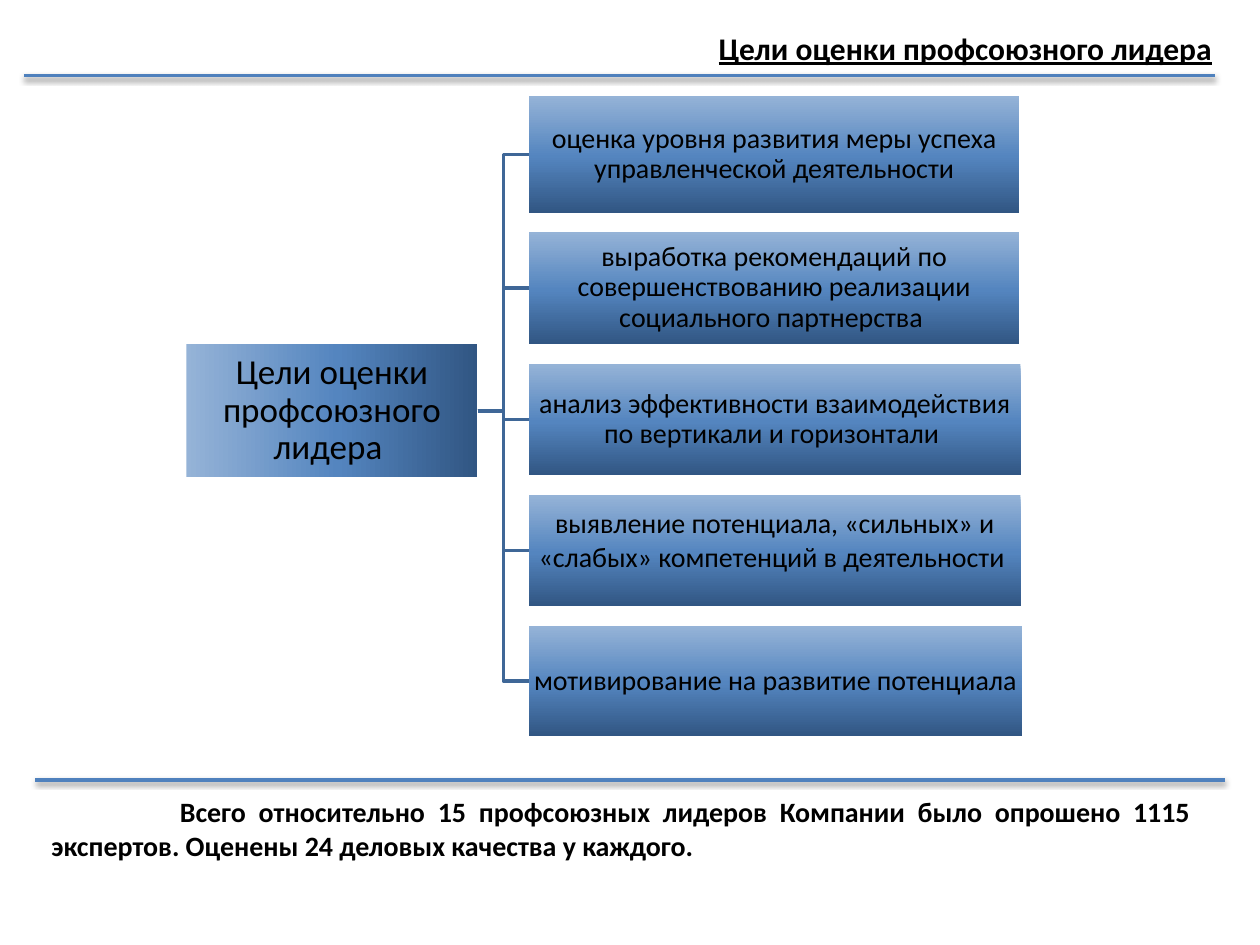
from copy import deepcopy
from dataclasses import dataclass

from lxml import etree
from pptx import Presentation
from pptx.dml.color import RGBColor
from pptx.enum import shapes as kinds, text as modes
from pptx.oxml import ns
from pptx.slide import Slide
from pptx.util import Inches, Pt

BLACK = RGBColor(0x00, 0x00, 0x00)
RULE = RGBColor(0x4F, 0x81, 0xBD)
LINK = RGBColor(0x3F, 0x67, 0x97)
SHADES = (
    (0, RGBColor(0x95, 0xB3, 0xD7)),
    (0.52, RGBColor(0x54, 0x85, 0xBF)),
    (1, RGBColor(0x31, 0x56, 0x83)),
)
ALIGN = modes.PP_ALIGN
ANCHOR = modes.MSO_ANCHOR
GOALS = (
    ("оценка уровня развития меры успеха управленческой деятельности",
     0.76, 3.89, 0.93, {}, {}),
    ("выработка рекомендаций по совершенствованию реализации социального партнерства ",
     1.84, 3.89, 0.89, {}, {}),
    ("анализ эффективности взаимодействия по вертикали и горизонтали ",
     2.89, 3.9, 0.88, {}, {}),
    ("выявление потенциала, «сильных» и «слабых» компетенций в деятельности ",
     3.93, 3.9, 0.88, {"line_spacing": 1.0}, {"margin_bottom": Inches(0.19)}),
    ("мотивирование на развитие потенциала",
     4.97, 3.91, 0.87, {}, {}),
)


def apply(item, values):
    for key, value in values.items():
        setattr(item, key, value)


@dataclass
class Board:
    slide: Slide
    face: str = "Calibri"

    def label(self, shape, words, font, para, frame):
        area = shape.text_frame
        area.text = words
        apply(area, {"word_wrap": True, **frame})
        line = area.paragraphs[0]
        apply(line, para)
        style = line.runs[0].font
        apply(style, {"name": self.face, **font})
        style.color.rgb = BLACK

    def title(self, words, box):
        shape = self.slide.shapes.title
        apply(shape, dict(zip(("left", "top", "width", "height"), map(Inches, box))))
        self.label(shape, words, {"size": Pt(18), "bold": True, "underline": True},
                   {"alignment": ALIGN.RIGHT}, {"vertical_anchor": ANCHOR.TOP})

    def note(self, words, box, indent):
        shape = self.slide.shapes.add_textbox(*map(Inches, box))
        self.label(shape, words, {"size": Pt(16), "bold": True},
                   {"alignment": ALIGN.JUSTIFY}, {})
        props = shape.text_frame.paragraphs[0]._p.get_or_add_pPr()
        props.set("indent", str(Inches(indent)))

    def rule(self, left, right, y):
        line = self.slide.shapes.add_connector(
            kinds.MSO_CONNECTOR.STRAIGHT, *map(Inches, (left, y, right, y)))
        line.line.color.rgb = RULE
        line.line.width = Pt(2)
        effects = etree.SubElement(line._element.spPr, ns.qn("a:effectLst"))
        shadow = etree.SubElement(
            effects, ns.qn("a:outerShdw"), blurRad="40000", dist="20000",
            dir="5400000", rotWithShape="0")
        tint = etree.SubElement(shadow, ns.qn("a:srgbClr"), val="000000")
        etree.SubElement(tint, ns.qn("a:alpha"), val="38000")

    def link(self, start, end):
        (left, top), (right, low) = start, end
        bend = (left + right) / 2
        outline = self.slide.shapes.build_freeform(Inches(left), Inches(top))
        points = ((bend, top), (bend, low), (right, low))
        outline.add_line_segments([tuple(map(Inches, p)) for p in points], close=False)
        shape = outline.convert_to_shape()
        shape.shadow.inherit = False
        shape.fill.background()
        shape.line.color.rgb = LINK
        shape.line.width = Pt(2)

    def block(self, words, box, size, angle, para, frame):
        shape = self.slide.shapes.add_shape(
            kinds.MSO_SHAPE.RECTANGLE, *map(Inches, box))
        shape.shadow.inherit = False
        shape.line.fill.background()
        shape.fill.gradient()
        shape.fill.gradient_angle = angle
        stops = shape._element.spPr.find(".//" + ns.qn("a:gsLst"))
        stops.append(deepcopy(stops[0]))
        for stop, (place, shade) in zip(shape.fill.gradient_stops, SHADES):
            stop.position = place
            stop.color.rgb = shade
        edges = {f"margin_{side}": Inches(0.01)
                 for side in ("left", "top", "right", "bottom")}
        self.label(shape, words, {"size": Pt(size)},
                   {"alignment": ALIGN.CENTER, "line_spacing": 0.9, **para},
                   {"vertical_anchor": ANCHOR.MIDDLE, **edges, **frame})


def main():
    deck = Presentation()
    deck.slide_width, deck.slide_height = Inches(10), Inches(7.5)
    board = Board(deck.slides.add_slide(deck.slide_layouts[5]))
    board.title("Цели оценки профсоюзного лидера", (0.29, 0.18, 9.43, 0.4))
    board.rule(0.19, 9.64, 0.6)
    for _, top, _, height, _, _ in reversed(GOALS):
        board.link((3.79, 3.26), (4.2, top + height / 2))
    board.block("Цели оценки профсоюзного лидера ",
                (1.48, 2.73, 2.31, 1.06), 20, 0, {}, {})
    for words, top, width, height, para, frame in GOALS:
        board.block(words, (4.2, top, width, height), 16, 270, para, frame)
    board.note("Всего относительно 15 профсоюзных лидеров Компании было опрошено 1115 "
               "экспертов. Оценены 24 деловых качества у каждого.",
               (0.31, 6.26, 9.24, 0.91), 1.02)
    board.rule(0.28, 9.72, 6.19)
    deck.save("out.pptx")


if __name__ == "__main__":
    main()
